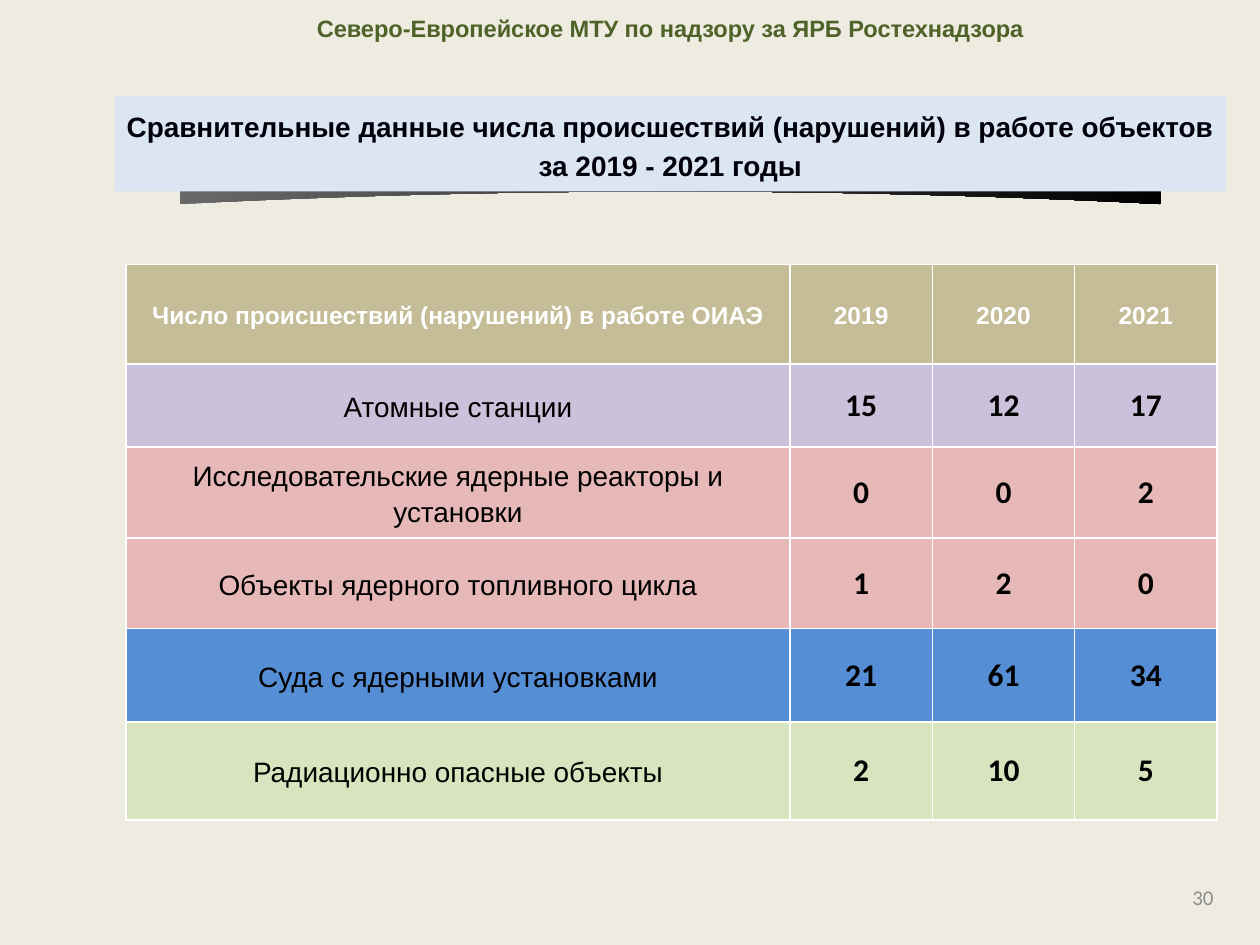
"""Build a slide comparing incident counts at nuclear facilities for 2019-2021."""
from lxml import etree
from pptx import Presentation
from pptx import util as u
from pptx.dml import color
from pptx.enum import shapes, text
from pptx.oxml import ns

HEADER = ["Северо-Европейское МТУ по надзору за ЯРБ Ростехнадзора"]
TITLE = [
    "Сравнительные данные числа происшествий (нарушений) в работе объектов",
    "за 2019 - 2021 годы",
]
PAGE_NUMBER = ["30"]
ROWS = [
    ("heading", 10.53, ["Число происшествий (нарушений) в работе ОИАЭ"], ("2019", "2020", "2021")),
    ("stations", 8.8, ["Атомные станции"], ("15", "12", "17")),
    ("cycle", 9.6, ["Исследовательские ядерные реакторы и", "установки"], ("0", "0", "2")),
    ("cycle", 9.6, ["Объекты ядерного топливного цикла"], ("1", "2", "0")),
    ("ships", 9.87, ["Суда с ядерными установками"], ("21", "61", "34")),
    ("radiation", 10.4, ["Радиационно опасные объекты"], ("2", "10", "5")),
]
COLUMNS = (52.7, 11.3, 11.3, 11.3)
BOXES = {
    "header": (3.2, 1.2, 100, 4.13),
    "title": (9.1, 10.13, 88.2, 10.13),
    "table": (10, 28, 86.5, 58.8),
    "page": (74, 92.27, 23.3, 5.33),
}
SHADOW = {"center": 53.2, "half": 38.9, "peak": 16.8, "shoulder": 18, "arch": 20.27, "foot": 21.6, "steps": 24}
THEME = {
    "background": "EEECE1",
    "banner": "DCE6F2",
    "shadow": ("6C6C6C", "000000"),
    "border": "FFFFFF",
    "fills": {
        "heading": "C4BD97", "stations": "CCC1DA", "cycle": "E6B9B8",
        "ships": "558ED5", "radiation": "D7E4BD",
    },
    "fonts": {
        "header": {"name": "Arial", "size": 13.5, "bold": True, "color": "4F6228"},
        "title": {"name": "Arial", "size": 16, "bold": True, "color": "00000A"},
        "heading": {"name": "Arial", "size": 14, "bold": True, "color": "FFFFFF"},
        "label": {"name": "Arial", "size": 16, "bold": False, "color": "000000"},
        "value": {"name": "Calibri", "size": 18, "bold": True, "color": "000000"},
        "page": {"name": "Calibri", "size": 12, "bold": False, "color": "8C8C8C"},
    },
    "spacing": {"header": 0.9, "title": 1.15, "heading": 1.15, "label": 1.15, "value": 1.0, "page": 1.0},
}
CELL_FORMAT = {
    "vertical_anchor": text.MSO_ANCHOR.MIDDLE,
    "margin_left": u.Inches(0.01), "margin_right": u.Inches(0.01),
    "margin_top": 0, "margin_bottom": 0,
}

WIDTH, HEIGHT = u.Inches(10), u.Inches(7.5)


def across(percent):
    """Convert a share of the slide width."""
    return round(WIDTH * percent / 100)


def down(percent):
    """Convert a share of the slide height."""
    return round(HEIGHT * percent / 100)


def box(name):
    """Return the place of a named box."""
    left, top, width, height = BOXES[name]
    return across(left), down(top), across(width), down(height)


def apply(target, values):
    """Set every attribute in a dict of format values."""
    for name, value in values.items():
        setattr(target, name, value)


def paint(fill, code):
    """Fill with one solid colour."""
    fill.solid()
    fill.fore_color.rgb = color.RGBColor.from_string(code)


def write(frame, lines, role, alignment=text.PP_ALIGN.CENTER):
    """Write lines as paragraphs in the style of a role."""
    style = THEME["fonts"][role]
    for index, line in enumerate(lines):
        paragraph = frame.paragraphs[0] if index == 0 else frame.add_paragraph()
        apply(paragraph, {"alignment": alignment, "line_spacing": THEME["spacing"][role]})
        run = paragraph.add_run()
        run.text = line
        apply(run.font, {"name": style["name"], "size": u.Pt(style["size"]), "bold": style["bold"]})
        run.font.color.rgb = color.RGBColor.from_string(style["color"])


def add_text(slide, name, lines, anchor, alignment):
    """Add a wrapped text box."""
    frame = slide.shapes.add_textbox(*box(name)).text_frame
    apply(frame, {"word_wrap": True, "vertical_anchor": anchor})
    write(frame, lines, name, alignment)


def add_shadow(slide):
    """Add the arched shadow under the title banner."""
    center, half, steps = SHADOW["center"], SHADOW["half"], SHADOW["steps"]
    rise = SHADOW["foot"] - SHADOW["arch"]
    shares = [1 - 2 * step / steps for step in range(steps + 1)]
    points = [(center + half * share, SHADOW["arch"] + rise * share ** 2) for share in shares]
    points += [(center - half, SHADOW["shoulder"]), (center, SHADOW["peak"]), (center + half, SHADOW["shoulder"])]
    corners = [(across(x), down(y)) for x, y in points]
    builder = slide.shapes.build_freeform(*corners[0], scale=1.0)
    builder.add_line_segments(corners[1:], close=True)
    shape = builder.convert_to_shape()
    shape.shadow.inherit = False
    shape.line.fill.background()
    shape.fill.gradient()
    shape.fill.gradient_angle = 315
    for stop, code, position in zip(shape.fill.gradient_stops, THEME["shadow"], (0, 1)):
        stop.color.rgb = color.RGBColor.from_string(code)
        stop.position = position


def add_title(slide):
    """Add the title banner."""
    shape = slide.shapes.add_shape(shapes.MSO_SHAPE.RECTANGLE, *box("title"))
    shape.shadow.inherit = False
    shape.line.fill.background()
    paint(shape.fill, THEME["banner"])
    apply(shape.text_frame, {"word_wrap": False, "vertical_anchor": text.MSO_ANCHOR.MIDDLE})
    write(shape.text_frame, TITLE, "title")


def add_borders(cell):
    """Draw thin lines on all four sides of a cell."""
    properties = cell._tc.get_or_add_tcPr()
    for index, side in enumerate(("lnL", "lnR", "lnT", "lnB")):
        line = etree.Element(ns.qn(f"a:{side}"), w=str(u.Pt(1)))
        fill = etree.SubElement(line, ns.qn("a:solidFill"))
        etree.SubElement(fill, ns.qn("a:srgbClr"), val=THEME["border"])
        properties.insert(index, line)


def add_table(slide):
    """Add the table of incident counts."""
    table = slide.shapes.add_table(len(ROWS), len(COLUMNS), *box("table")).table
    apply(table, {"first_row": False, "horz_banding": False})
    for column, width in zip(table.columns, COLUMNS):
        column.width = across(width)
    for row, (group, height, label, values) in zip(table.rows, ROWS):
        row.height = down(height)
        for index, lines in enumerate([label, *([value] for value in values)]):
            cell = row.cells[index]
            role = "heading" if group == "heading" else "value" if index else "label"
            apply(cell, CELL_FORMAT)
            paint(cell.fill, THEME["fills"][group])
            add_borders(cell)
            write(cell.text_frame, lines, role)


def main():
    """Assemble and save the slide."""
    presentation = Presentation()
    apply(presentation, {"slide_width": WIDTH, "slide_height": HEIGHT})
    slide = presentation.slides.add_slide(presentation.slide_layouts[6])
    paint(slide.background.fill, THEME["background"])
    add_text(slide, "header", HEADER, text.MSO_ANCHOR.TOP, text.PP_ALIGN.CENTER)
    add_shadow(slide)
    add_title(slide)
    add_table(slide)
    add_text(slide, "page", PAGE_NUMBER, text.MSO_ANCHOR.MIDDLE, text.PP_ALIGN.RIGHT)
    presentation.save("out.pptx")


if __name__ == "__main__":
    main()
